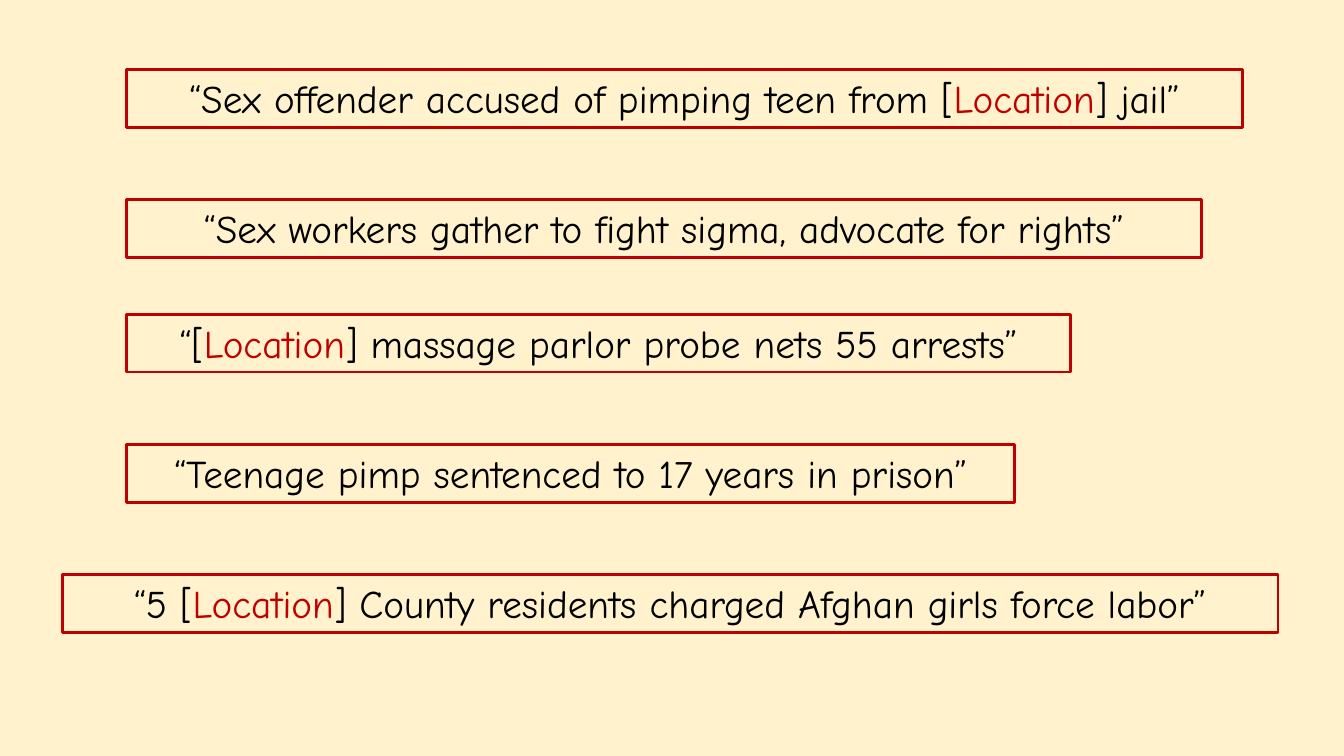
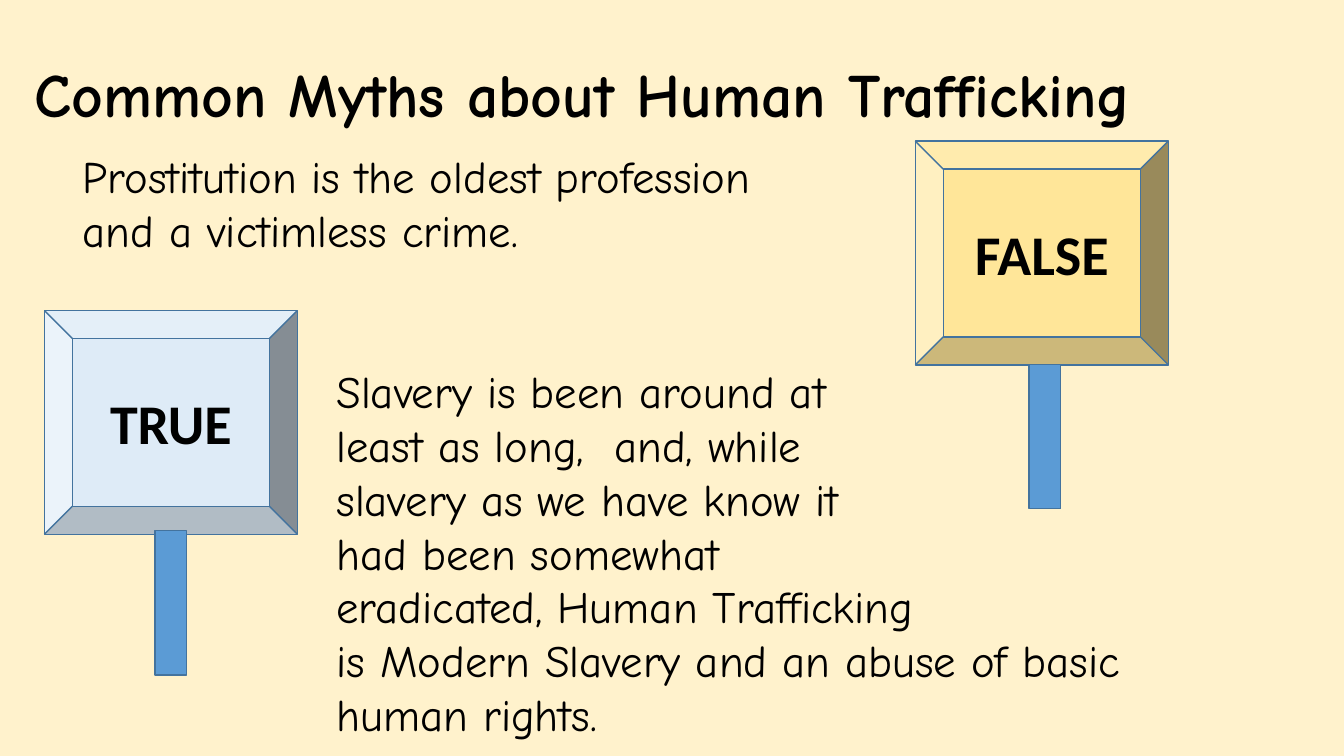
from pptx import Presentation
from pptx.dml.color import RGBColor
from pptx.enum.shapes import MSO_SHAPE as Kind
from pptx.enum.text import MSO_ANCHOR as Anchor, MSO_AUTO_SIZE as Fit, PP_ALIGN as Align
from pptx.util import Pt

CREAM = RGBColor(0xFF, 0xF2, 0xCC)
RED = RGBColor(0xC0, 0x00, 0x00)
BLACK = RGBColor(0x00, 0x00, 0x00)
BLUE = RGBColor(0x5B, 0x9B, 0xD5)
NAVY = RGBColor(0x43, 0x73, 0x9E)
GOLD = RGBColor(0xFF, 0xE6, 0x99)
PALE = RGBColor(0xDE, 0xEB, 0xF7)
COMIC = "Comic Neue"


def style(run, size, color=BLACK, name=COMIC, bold=False):
    font = run.font
    font.size, font.name, font.bold = Pt(size), name, bold
    font.color.rgb = color


def add_box(slide, kind, place, fill, line, width):
    box = slide.shapes.add_shape(kind, *[Pt(n) for n in place])
    box.shadow.inherit = False
    if fill is None:
        box.fill.background()
    else:
        box.fill.solid()
        box.fill.fore_color.rgb = fill
    box.line.color.rgb = line
    box.line.width = Pt(width)
    return box


# Shared setup
deck = Presentation()
deck.slide_width, deck.slide_height = Pt(960), Pt(540)
back = deck.slide_master.background.fill
back.solid()
back.fore_color.rgb = CREAM

# Slide 1: headlines, with the parts between bars in red
slide = deck.slides.add_slide(deck.slide_layouts[6])
heads = [
    (90.5, 49.7, 797, "“Sex offender accused of pimping teen from [|Location|] jail”"),
    (90.5, 142.6, 767.5, "“Sex workers gather to fight sigma, advocate for rights”"),
    (90.5, 224.6, 674, "“[|Location|] massage parlor probe nets 55 arrests”"),
    (90.5, 317.5, 634.3, "“Teenage pimp sentenced to 17 years in prison”"),
    (44.6, 410.4, 868.3, "“5 [|Location|] County residents charged Afghan girls force labor”"),
]
for left, top, width, text in heads:
    box = add_box(slide, Kind.RECTANGLE, (left, top, width, 41.2), None, RED, 2)
    frame = box.text_frame
    frame.word_wrap = False
    frame.vertical_anchor = Anchor.TOP
    para = frame.paragraphs[0]
    para.alignment = Align.CENTER
    for i, part in enumerate(text.split("|")):
        run = para.add_run()
        run.text = part
        style(run, 28, RED if i % 2 else BLACK)

# Slide 2: title
slide = deck.slides.add_slide(deck.slide_layouts[5])
title = slide.shapes.title
title.left, title.top, title.width, title.height = Pt(17.3), Pt(25.2), Pt(918), Pt(89.3)
frame = title.text_frame
frame.text = "Common Myths about Human Trafficking"
frame.auto_size = Fit.NONE
frame.vertical_anchor = Anchor.MIDDLE
para = frame.paragraphs[0]
para.alignment = Align.LEFT
para.line_spacing = 0.9
style(para.runs[0], 44, bold=True)

# Myth and answer
notes = [
    (51.8, 103, 500, ["Prostitution is the oldest profession", "and a victimless crime."]),
    (233.2, 256.4, 600, [
        "Slavery is been around at",
        "least as long,  and, while",
        "slavery as we have know it",
        "had been somewhat",
        "eradicated, Human Trafficking",
        "is Modern Slavery and an abuse of basic",
        "human rights.",
    ]),
]
for left, top, width, lines in notes:
    high = 38.4 * len(lines) + 7.2
    frame = slide.shapes.add_textbox(Pt(left), Pt(top), Pt(width), Pt(high)).text_frame
    frame.word_wrap = False
    frame.text = "\n".join(lines)
    for para in frame.paragraphs:
        style(para.runs[0], 32)

# Signs: a board on a pole
signs = [
    ("FALSE", GOLD, 653.8, 100.8, 676.1, 263.5),
    ("TRUE", PALE, 31.7, 221.8, 51.8, 382.3),
]
for word, fill, left, top, pole_x, pole_y in signs:
    board = add_box(slide, Kind.BEVEL, (left, top, 180.7, 159.8), fill, NAVY, 1)
    frame = board.text_frame
    frame.text = word
    frame.vertical_anchor = Anchor.MIDDLE
    para = frame.paragraphs[0]
    para.alignment = Align.CENTER
    style(para.runs[0], 40, name="Calibri", bold=True)
    pole = add_box(slide, Kind.MATH_MINUS, (pole_x, pole_y, 140.4, 96.5), BLUE, NAVY, 1)
    pole.rotation = 270

deck.save("out.pptx")
